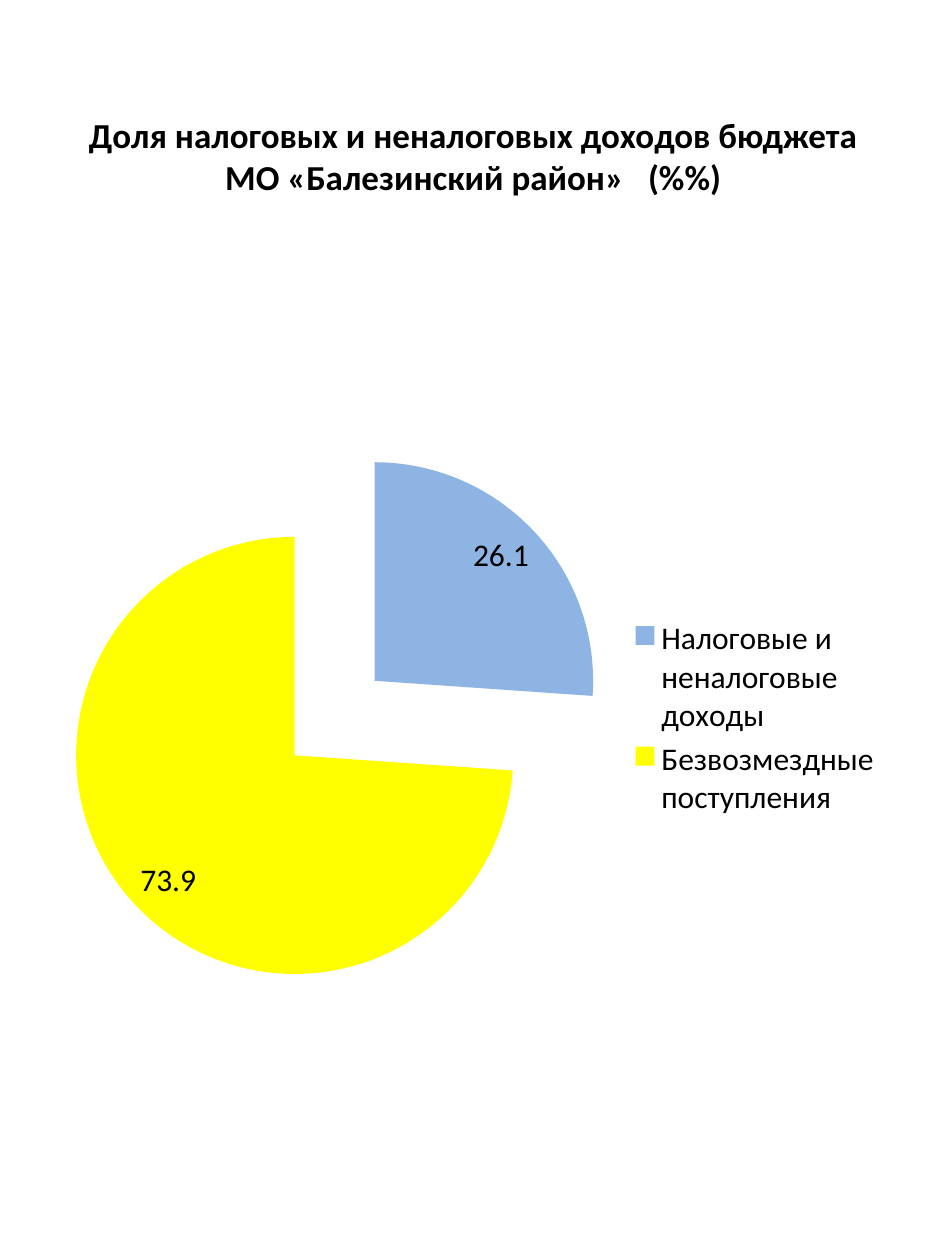
from dataclasses import dataclass

from pptx import Presentation
from pptx.chart.data import CategoryChartData as Data
from pptx.dml.color import RGBColor as Rgb
from pptx.enum.chart import XL_CHART_TYPE as Kind
from pptx.enum.chart import XL_LABEL_POSITION as Spot
from pptx.enum.chart import XL_LEGEND_POSITION as Side
from pptx.enum.text import MSO_ANCHOR as Anchor
from pptx.enum.text import PP_ALIGN as Align
from pptx.util import Inches, Pt


@dataclass(frozen=True)
class Theme:
    font: str = "Calibri"
    ink: str = "000000"
    head: int = 20
    body: int = 18


THEME = Theme()
GAP = 9  # extra points between the title and its unit

TITLE = "Доля налоговых и неналоговых доходов бюджета МО «Балезинский район»"
UNIT = "(%%)"
SHARES = [
    ("Налоговые и неналоговые доходы", 26.1, "8EB4E3"),
    ("Безвозмездные поступления", 73.9, "FFFF00"),
]
EXPLODE = 25

SIZE = (7.5, 10)
TITLE_BOX = (0.38, 0.4, 6.75, 1.67)
CHART_BOX = (0.35, 2.4, 6.75, 6.6)


def style(font, size, bold=False):
    font.name = THEME.font
    font.size = Pt(size)
    font.bold = bold
    font.color.rgb = Rgb.from_string(THEME.ink)


def add_text(slide, box, parts, size, bold=False, align=Align.CENTER):
    """Write one paragraph from (text, extra letter spacing in points) parts."""
    frame = slide.shapes.add_textbox(*map(Inches, box)).text_frame
    frame.word_wrap = True
    frame.vertical_anchor = Anchor.MIDDLE
    para = frame.paragraphs[0]
    para.alignment = align
    for text, space in parts:
        run = para.add_run()
        run.text = text
        style(run.font, size, bold)
        if space:
            run.font._element.set("spc", str(space * 100))


def add_pie(slide, box, shares):
    names, values, colors = zip(*shares)
    data = Data()
    data.categories = names
    data.add_series("Доля", values)
    chart = slide.shapes.add_chart(Kind.PIE_EXPLODED, *map(Inches, box), data).chart
    style(chart.font, THEME.body)
    chart.has_title = False
    chart.has_legend = True
    chart.legend.position = Side.RIGHT
    chart.legend.include_in_layout = False

    plot = chart.plots[0]
    plot.vary_by_categories = True
    series = plot.series[0]
    for part in series._element.findall("{*}explosion"):
        part.set("val", str(EXPLODE))
    for i, color in enumerate(colors):
        fill = series.points[i].format.fill
        fill.solid()
        fill.fore_color.rgb = Rgb.from_string(color)

    plot.has_data_labels = True
    labels = plot.data_labels
    labels.show_value = True
    labels.show_percentage = False
    labels.position = Spot.INSIDE_END
    style(labels.font, THEME.body)


def main():
    deck = Presentation()
    deck.slide_width, deck.slide_height = map(Inches, SIZE)
    slide = deck.slides.add_slide(deck.slide_layouts[6])
    parts = [(TITLE, 0), (" ", GAP), (UNIT, 0)]
    add_text(slide, TITLE_BOX, parts, THEME.head, bold=True)
    add_pie(slide, CHART_BOX, SHARES)
    deck.save("out.pptx")


if __name__ == "__main__":
    main()
